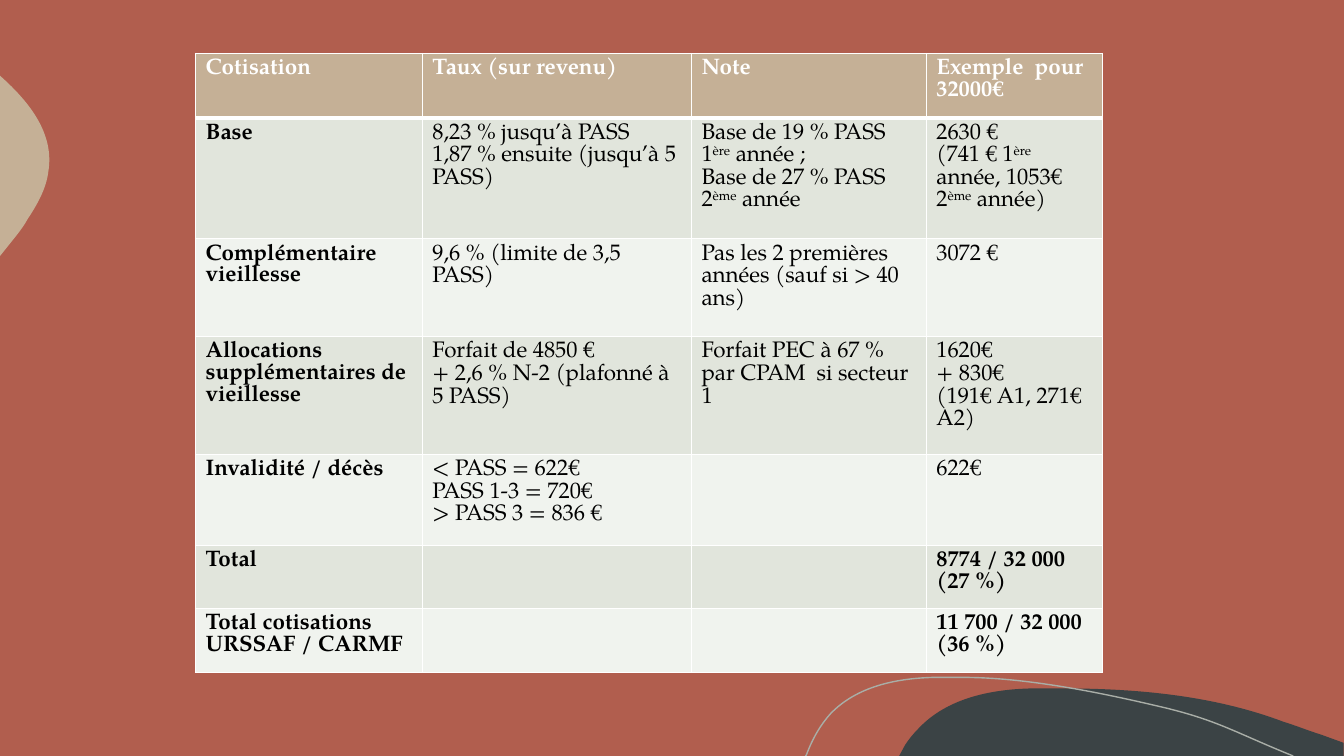
from dataclasses import dataclass

import lxml.etree
import pptx
import pptx.dml.color
import pptx.oxml.ns
import pptx.util

EMU_PER_PX = 9144


@dataclass(frozen=True)
class Theme:
    background: str = "B15E4E"
    sand: str = "C5B096"
    slate: str = "3B4345"
    thread: str = "A9AEA7"
    white: str = "FFFFFF"
    black: str = "000000"
    bands: tuple[str, str] = ("E1E5DC", "F0F3EE")
    font: str = "TeX Gyre Pagella"
    text_size: int = 16
    thin: int = 1
    thick: int = 3


@dataclass(frozen=True)
class Outline:
    start: tuple[int, int]
    segments: tuple[tuple[int, ...], ...]
    fill: str | None = None
    line: str | None = None


THEME = Theme()

OUTLINES = (
    Outline(
        (1054, 683),
        (
            (1128, 683, 1204, 690, 1273, 716),
            (1286, 720, 1298, 725, 1311, 729),
            (1333, 737), (1333, 750), (892, 750), (898, 739),
            (902, 733, 906, 728, 911, 723),
            (939, 693, 982, 684, 1023, 683),
            (1033, 683, 1043, 683, 1054, 683),
        ),
        fill=THEME.slate,
    ),
    Outline(
        (0, 75),
        (
            (1, 76),
            (30, 102, 54, 133, 48, 170),
            (46, 187, 37, 203, 27, 218),
            (24, 224, 17, 233, 8, 244),
            (0, 254),
        ),
        fill=THEME.sand,
    ),
    Outline(
        (799, 750),
        (
            (800, 749),
            (806, 733, 814, 719, 824, 708),
            (850, 681, 889, 673, 926, 672),
            (955, 672),
            (1022, 672, 1100, 689, 1155, 702),
            (1209, 715, 1226, 727, 1283, 750),
        ),
        line=THEME.thread,
    ),
)

TABLE_LEFT, TABLE_TOP = 194, 53
COLUMN_WIDTHS = (225, 267, 233, 175)
ROW_HEIGHTS = (64, 120, 97, 117, 90, 63, 63)
FIRST_TOTAL_ROW = 5
CONTRIBUTIONS = (
    ("Cotisation", "Taux (sur revenu)", "Note", "Exemple  pour 32000€"),
    (
        "Base",
        "8,23 % jusqu’à PASS\n1,87 % ensuite (jusqu’à 5 PASS)",
        "Base de 19 % PASS 1^ère^ année ;\nBase de 27 % PASS 2^ème^ année",
        "2630 €\n(741 € 1^ère^ année, 1053€ 2^ème^ année)",
    ),
    (
        "Complémentaire vieillesse",
        "9,6 % (limite de 3,5 PASS)",
        "Pas les 2 premières années (sauf si > 40 ans)",
        "3072 €",
    ),
    (
        "Allocations supplémentaires de vieillesse",
        "Forfait de 4850 €\n+ 2,6 % N-2 (plafonné à 5 PASS)",
        "Forfait PEC à 67 % par CPAM  si secteur 1",
        "1620€\n+ 830€\n(191€ A1, 271€ A2)",
    ),
    (
        "Invalidité / décès",
        "< PASS = 622€\nPASS 1-3 = 720€\n> PASS 3 = 836 €",
        "",
        "622€",
    ),
    ("Total", "", "", "8774 / 32 000 (27 %)"),
    ("Total cotisations\nURSSAF / CARMF", "", "", "11 700 / 32 000 (36 %)"),
)


def px(value: int) -> pptx.util.Emu:
    return pptx.util.Emu(value * EMU_PER_PX)


def rgb(value: str) -> pptx.dml.color.RGBColor:
    return pptx.dml.color.RGBColor.from_string(value)


def paint(fill, color: str) -> None:
    fill.solid()
    fill.fore_color.rgb = rgb(color)


def bend_segments(sp, outline: Outline, left: int, top: int) -> None:
    qn = pptx.oxml.ns.qn
    straight = list(sp._element.iter(qn("a:lnTo")))
    for ln_to, segment in zip(straight, outline.segments):
        if len(segment) == 2:
            continue
        ln_to.tag = qn("a:cubicBezTo")
        for pt in list(ln_to):
            ln_to.remove(pt)
        for x, y in zip(segment[::2], segment[1::2]):
            lxml.etree.SubElement(ln_to, qn("a:pt"), x=str(x - left), y=str(y - top))


def draw_outline(shapes, outline: Outline) -> None:
    anchors = [segment[-2:] for segment in outline.segments]
    builder = shapes.build_freeform(*outline.start, scale=EMU_PER_PX)
    builder.add_line_segments(anchors, close=outline.fill is not None)
    sp = builder.convert_to_shape()
    left, top = (min(axis) for axis in zip(outline.start, *anchors))
    bend_segments(sp, outline, left, top)
    sp.shadow.inherit = False
    if outline.fill:
        paint(sp.fill, outline.fill)
    else:
        sp.fill.background()
    if outline.line:
        sp.line.color.rgb = rgb(outline.line)
        sp.line.width = pptx.util.Pt(THEME.thin)
    else:
        sp.line.fill.background()


def set_borders(cell, row: int) -> None:
    widths = {"L": THEME.thin, "R": THEME.thin,
              "T": THEME.thick if row == 1 else THEME.thin,
              "B": THEME.thick if row == 0 else THEME.thin}
    qn = pptx.oxml.ns.qn
    tc_pr = cell._tc.get_or_add_tcPr()
    for side, width in widths.items():
        ln = lxml.etree.SubElement(tc_pr, qn(f"a:ln{side}"), w=str(pptx.util.Pt(width)))
        solid = lxml.etree.SubElement(ln, qn("a:solidFill"))
        lxml.etree.SubElement(solid, qn("a:srgbClr"), val=THEME.white)


def write_text(cell, text: str, color: str, bold: bool) -> None:
    tf = cell.text_frame
    for i, line in enumerate(text.split("\n")):
        p = tf.add_paragraph() if i else tf.paragraphs[0]
        p.font.name = THEME.font
        p.font.size = pptx.util.Pt(THEME.text_size)
        p.font.bold = bold
        p.font.color.rgb = rgb(color)
        for j, part in enumerate(line.split("^")):
            r = p.add_run()
            r.text = part
            if j % 2:
                r._r.get_or_add_rPr().set("baseline", "30000")


def draw_table(shapes) -> None:
    table = shapes.add_table(
        len(ROW_HEIGHTS), len(COLUMN_WIDTHS), px(TABLE_LEFT), px(TABLE_TOP),
        px(sum(COLUMN_WIDTHS)), px(sum(ROW_HEIGHTS)),
    ).table
    for column, width in zip(table.columns, COLUMN_WIDTHS):
        column.width = px(width)
    for i, (row, height) in enumerate(zip(table.rows, ROW_HEIGHTS)):
        row.height = px(height)
        header = i == 0
        for j, (cell, text) in enumerate(zip(row.cells, CONTRIBUTIONS[i])):
            set_borders(cell, i)
            paint(cell.fill, THEME.sand if header else THEME.bands[(i - 1) % 2])
            if text:
                bold = header or j == 0 or i >= FIRST_TOTAL_ROW
                write_text(cell, text, THEME.white if header else THEME.black, bold)


def main() -> None:
    prs = pptx.Presentation()
    prs.slide_width, prs.slide_height = pptx.util.Pt(960), pptx.util.Pt(540)
    s = prs.slides.add_slide(prs.slide_layouts[6])
    paint(s.background.fill, THEME.background)
    for outline in OUTLINES:
        draw_outline(s.shapes, outline)
    draw_table(s.shapes)
    prs.save("out.pptx")


if __name__ == "__main__":
    main()
